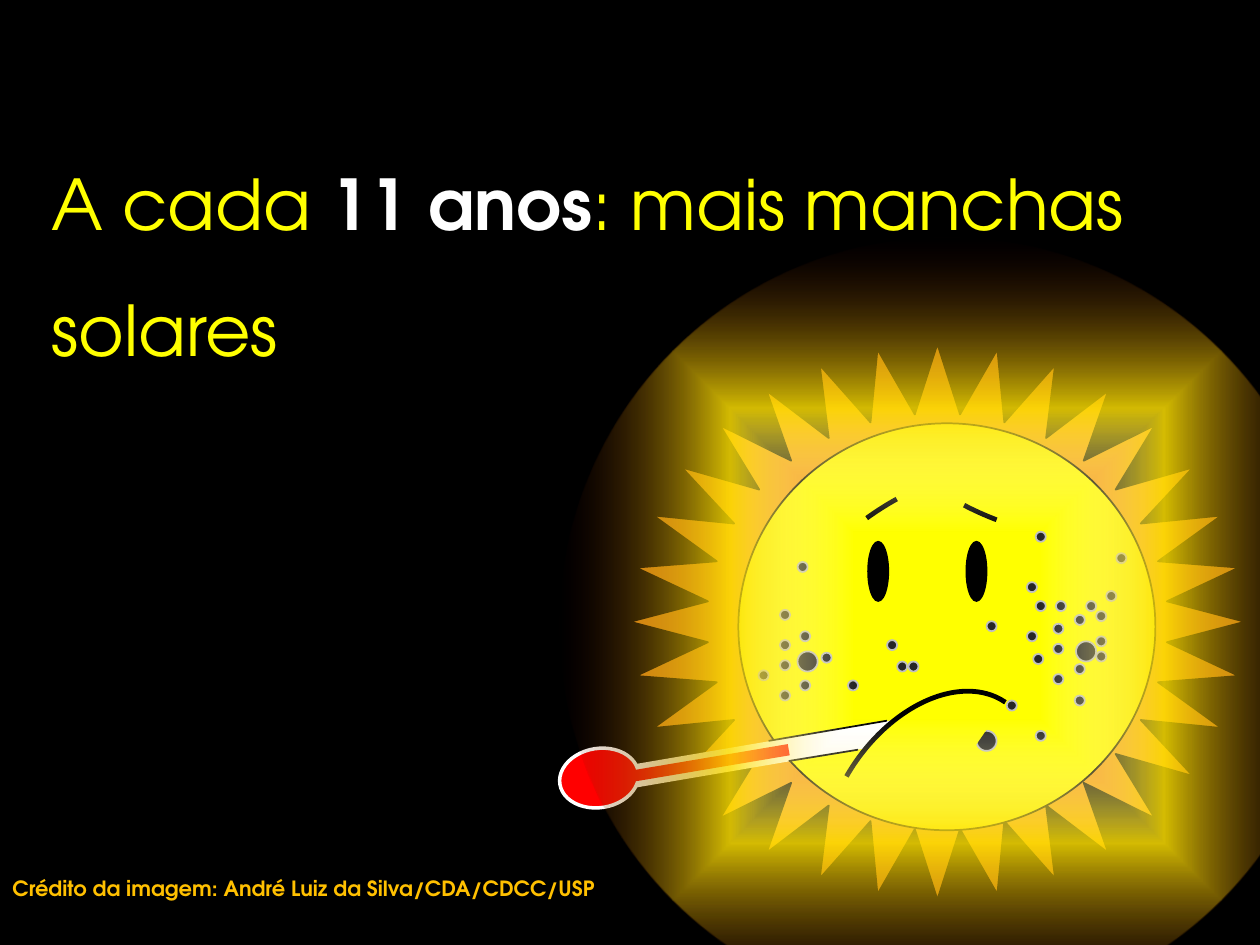
from dataclasses import dataclass

from pptx import Presentation
from pptx.dml.color import RGBColor
from pptx.enum.shapes import MSO_CONNECTOR as Connector
from pptx.enum.shapes import MSO_SHAPE as Preset
from pptx.enum.text import MSO_ANCHOR as Anchor
from pptx.enum.text import MSO_AUTO_SIZE as AutoSize
from pptx.enum.text import PP_ALIGN as Align
from pptx.oxml import parse_xml
from pptx.oxml.ns import nsdecls, qn
from pptx.oxml.xmlchemy import OxmlElement
from pptx.util import Emu, Inches, Pt

PX = Inches(1) // 100
ADJUSTMENT_PER_DEGREE = 0.6
FONT = "TeX Gyre Adventor"
COLORS = {
    "black": "000000",
    "white": "FFFFFF",
    "yellow": "FFFF00",
    "gold": "FFC000",
    "orange": "F5981B",
    "red": "FF0000",
    "spot": "262626",
    "spot_edge": "BFBFBF",
    "glow": "FDDF03",
    "glow_edge": "4D0808",
}


@dataclass(frozen=True)
class Figure:
    preset: Preset
    box: tuple[int, int, int, int]
    fill: str
    line: str = "black"
    weight: float = 1
    rotation: float = 0
    angles: tuple[float, ...] = ()


@dataclass(frozen=True)
class Stroke:
    start: tuple[int, int]
    end: tuple[int, int]
    color: str = "black"
    weight: float = 1


@dataclass(frozen=True)
class GlowStop:
    position: int
    color: str
    opacity: int


def px(*lengths: int) -> list[Emu]:
    return [Emu(length * PX) for length in lengths]


def rgb(name: str) -> RGBColor:
    return RGBColor.from_string(COLORS[name])


def eye(left: int) -> Figure:
    return Figure(Preset.OVAL, (left, 430, 16, 47), "black")


def brow(left: int, top: int, rotation: float) -> Figure:
    return Figure(Preset.ARC, (left, top, 152, 45), "yellow", weight=2.75,
                  rotation=rotation, angles=(270, 323.5))


def spot(left: int, top: int, size: int) -> Figure:
    return Figure(Preset.OVAL, (left, top, size, size), "spot", "spot_edge")


FACE = [
    Figure(Preset.STAR_32_POINT, (500, 273, 488, 441), "orange"),
    Figure(Preset.OVAL, (586, 336, 331, 323), "yellow"),
    eye(689),
    Figure(Preset.MATH_MINUS, (413, 566, 350, 71), "white", "white", 1.25, 350.3),
    eye(767),
    brow(625, 407, 324.3),
    brow(723, 369, 200.9),
    Stroke((610, 588), (704, 572)),
]
LARGE_SPOTS = [(633, 517), (854, 509), (775, 580)]
SMALL_SPOTS = [
    (602, 532), (619, 548), (820, 519), (836, 535), (853, 552), (619, 508),
    (836, 495), (619, 524), (635, 540), (836, 511), (853, 527), (619, 484),
    (635, 501), (652, 518), (853, 488), (870, 505), (704, 508), (721, 525),
    (799, 556), (822, 580), (673, 540), (775, 572), (744, 611), (870, 517),
    (736, 595), (712, 525), (633, 446), (822, 422), (838, 477), (783, 493),
    (862, 477), (886, 439), (822, 477), (870, 485), (878, 469), (815, 462),
    (815, 501),
]
SPOTS = [spot(*place, 16) for place in LARGE_SPOTS]
SPOTS += [spot(*place, 8) for place in SMALL_SPOTS]
THERMOMETER_AND_MOUTH = [
    Figure(Preset.OVAL, (444, 594, 63, 47), "red", "white", 2, 351),
    Stroke((484, 619), (626, 595), "red", 6.5),
    Stroke((626, 604), (681, 595)),
    Figure(Preset.ARC, (631, 574, 213, 142), "yellow", weight=2.75,
           rotation=304.6, angles=(259.12, 0)),
]
GLOW = [
    GlowStop(24, "white", 0),
    GlowStop(56, "glow", 84),
    GlowStop(100, "glow_edge", 0),
]


def draw_figure(shapes, figure: Figure) -> None:
    shape = shapes.add_shape(figure.preset, *px(*figure.box))
    shape.shadow.inherit = False
    shape.rotation = figure.rotation
    for index, angle in enumerate(figure.angles):
        shape.adjustments[index] = angle * ADJUSTMENT_PER_DEGREE
    shape.fill.solid()
    shape.fill.fore_color.rgb = rgb(figure.fill)
    shape.line.color.rgb = rgb(figure.line)
    shape.line.width = Pt(figure.weight)


def draw_stroke(shapes, stroke: Stroke) -> None:
    connector = shapes.add_connector(Connector.STRAIGHT, *px(*stroke.start, *stroke.end))
    connector.line.color.rgb = rgb(stroke.color)
    connector.line.width = Pt(stroke.weight)
    connector._element.spPr.append(OxmlElement("a:effectLst"))


def draw_sun(slide) -> None:
    shapes = slide.shapes.add_group_shape().shapes
    for part in FACE + SPOTS + THERMOMETER_AND_MOUTH:
        if isinstance(part, Stroke):
            draw_stroke(shapes, part)
        else:
            draw_figure(shapes, part)


def draw_glow(slide, stops: list[GlowStop]) -> None:
    shape = slide.shapes.add_shape(Preset.OVAL, *px(444, 189, 615, 615))
    shape.shadow.inherit = False
    shape.line.fill.background()
    shape.fill.background()
    stop_xml = "".join(
        f'<a:gs pos="{stop.position * 1000}"><a:srgbClr val="{COLORS[stop.color]}">'
        f'<a:alpha val="{stop.opacity * 1000}"/></a:srgbClr></a:gs>'
        for stop in stops
    )
    gradient = parse_xml(
        f'<a:gradFill {nsdecls("a")} rotWithShape="1"><a:gsLst>{stop_xml}</a:gsLst>'
        '<a:path path="shape"><a:fillToRect l="50000" t="50000" r="50000" b="50000"/>'
        "</a:path></a:gradFill>"
    )
    properties = shape._element.spPr
    properties.replace(properties.find(qn("a:noFill")), gradient)


def write_title(slide) -> None:
    title = slide.shapes.title
    title.left, title.top, title.width, title.height = px(31, 21, 969, 346)
    frame = title.text_frame
    frame.auto_size = AutoSize.NONE
    frame.word_wrap = True
    frame.vertical_anchor = Anchor.MIDDLE
    paragraph = frame.paragraphs[0]
    paragraph.alignment = Align.LEFT
    paragraph.line_spacing = 1.5
    for text, color, bold in [
        ("A cada ", "yellow", False),
        ("11 anos", "white", True),
        (": mais manchas solares", "yellow", False),
    ]:
        run = paragraph.add_run()
        run.text = text
        run.font.name = FONT
        run.font.size = Pt(40)
        run.font.bold = bold
        run.font.color.rgb = rgb(color)


def write_credit(slide) -> None:
    frame = slide.shapes.add_textbox(*px(0, 690, 492, 30)).text_frame
    frame.word_wrap = True
    frame.auto_size = AutoSize.SHAPE_TO_FIT_TEXT
    paragraph = frame.paragraphs[0]
    paragraph.text = "Crédito da imagem: André Luiz da Silva/CDA/CDCC/USP"
    paragraph.font.name = FONT
    paragraph.font.size = Pt(12)
    paragraph.font.bold = True
    paragraph.font.color.rgb = rgb("gold")


def main() -> None:
    presentation = Presentation()
    presentation.slide_width, presentation.slide_height = px(1000, 750)
    slide = presentation.slides.add_slide(presentation.slide_layouts[5])
    slide.background.fill.solid()
    slide.background.fill.fore_color.rgb = rgb("black")
    write_title(slide)
    draw_sun(slide)
    draw_glow(slide, GLOW)
    write_credit(slide)
    presentation.save("out.pptx")


if __name__ == "__main__":
    main()
